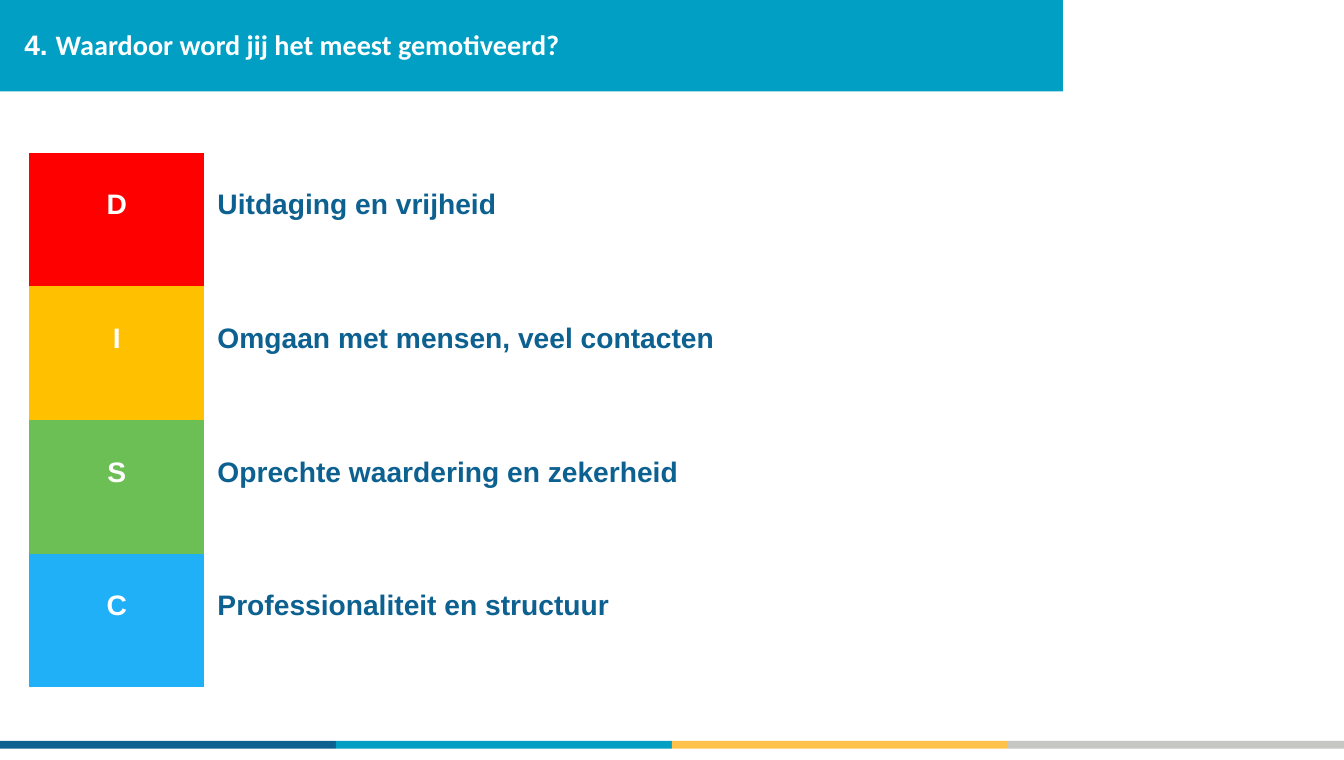
from pptx import Presentation
from pptx.dml.color import RGBColor
from pptx.enum.shapes import MSO_SHAPE
from pptx.enum.text import MSO_ANCHOR, PP_ALIGN
from pptx.util import Cm, Pt

WHITE = RGBColor(0xFF, 0xFF, 0xFF)
NAVY = RGBColor(0x0D, 0x61, 0x90)
TEAL = RGBColor(0x00, 0x9F, 0xC3)
GOLD = RGBColor(0xFE, 0xC2, 0x4A)
GRAY = RGBColor(0xC6, 0xC6, 0xC3)
RED = RGBColor(0xFF, 0x00, 0x00)
AMBER = RGBColor(0xFF, 0xC0, 0x00)
GREEN = RGBColor(0x6C, 0xBF, 0x55)
BLUE = RGBColor(0x20, 0xB0, 0xF8)

PLAIN = "{2D5ABB26-0587-4C30-8999-92F81FD0307C}"
WIDTH = 33.68
ROWS = [
    ("D", RED, "Uitdaging en vrijheid"),
    ("I", AMBER, "Omgaan met mensen, veel contacten"),
    ("S", GREEN, "Oprechte waardering en zekerheid"),
    ("C", BLUE, "Professionaliteit en structuur"),
]


def add_bar(slide, left, top, width, height, color):
    bar = slide.shapes.add_shape(
        MSO_SHAPE.RECTANGLE, Cm(left), Cm(top), Cm(width), Cm(height))
    bar.shadow.inherit = False
    bar.fill.solid()
    bar.fill.fore_color.rgb = color
    bar.line.fill.background()


def add_run(para, text, color, face="Arial"):
    run = para.add_run()
    run.text = text
    run.font.name = face
    run.font.size = Pt(20)
    run.font.bold = True
    run.font.color.rgb = color


def add_title(slide):
    box = slide.shapes.add_textbox(Cm(0.25), Cm(0.33), Cm(25.37), Cm(1.55))
    frame = box.text_frame
    frame.word_wrap = True
    frame.vertical_anchor = MSO_ANCHOR.MIDDLE
    frame.margin_left = Cm(0.36)
    para = frame.paragraphs[0]
    add_run(para, "4. ", WHITE)
    add_run(para, "Waardoor word jij het meest gemotiveerd?", WHITE, "Calibri")


def fill_cell(cell, text, color, align):
    cell.margin_left = cell.margin_right = Cm(0.33)
    cell.margin_top = Cm(0.92)
    cell.margin_bottom = Cm(0.13)
    cell.fill.background()
    para = cell.text_frame.paragraphs[0]
    para.alignment = align
    add_run(para, text, color)


def add_grid(slide):
    frame = slide.shapes.add_table(
        len(ROWS), 2, Cm(0.73), Cm(3.83), Cm(31.57), Cm(13.4))
    table = frame.table
    table.first_row = False
    table.horz_banding = False
    table._tbl.tblPr[0].text = PLAIN
    table.columns[0].width = Cm(4.39)
    table.columns[1].width = Cm(27.18)
    for row, (letter, color, text) in zip(table.rows, ROWS):
        row.height = Cm(3.35)
        badge, label = row.cells
        fill_cell(badge, letter, WHITE, PP_ALIGN.CENTER)
        badge.fill.solid()
        badge.fill.fore_color.rgb = color
        fill_cell(label, text, NAVY, PP_ALIGN.LEFT)


def main():
    deck = Presentation()
    deck.slide_width = Cm(WIDTH)
    deck.slide_height = Cm(19.05)
    slide = deck.slides.add_slide(deck.slide_layouts[6])
    step = WIDTH / 4
    for i, color in enumerate((NAVY, TEAL, GOLD, GRAY)):
        add_bar(slide, i * step, 18.57, step, 0.2, color)
    add_bar(slide, 0, 0, 26.64, 2.29, TEAL)
    add_grid(slide)
    add_title(slide)
    deck.save("out.pptx")


if __name__ == "__main__":
    main()
